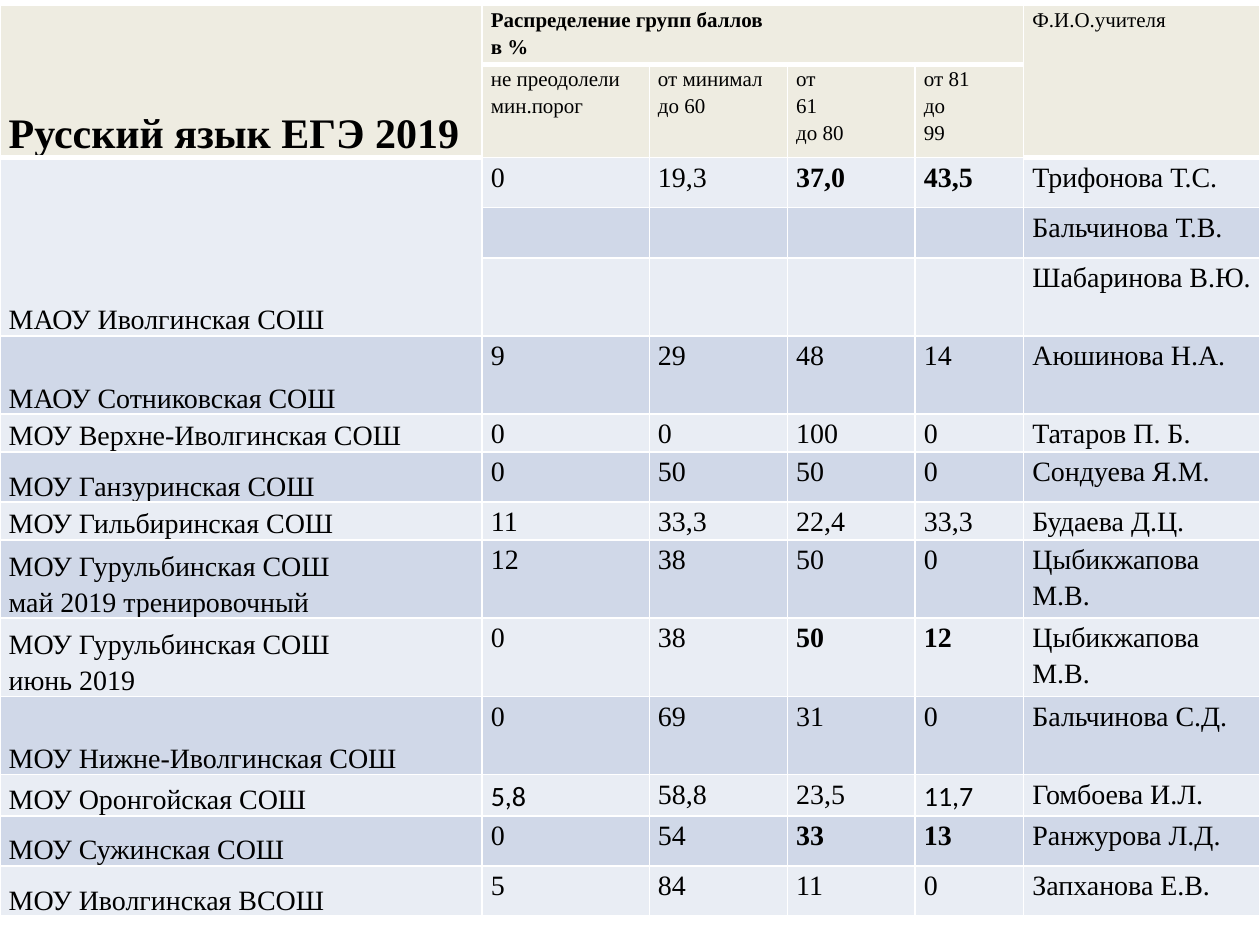
from lxml.etree import SubElement as Sub
from pptx import Presentation
from pptx.dml.color import RGBColor as Rgb
from pptx.enum.text import MSO_ANCHOR as Anchor
from pptx.oxml.ns import qn
from pptx.util import Pt

HUES = {"head": "EEECE1", "light": "E9EDF4", "dark": "D0D8E8",
        "line": "FFFFFF", "text": "000000"}
SERIF, SANS = "Times New Roman", "Calibri"

ROWS = [
    ["Русский язык ЕГЭ 2019", "Распределение групп баллов\nв %", "", "", "",
     "Ф.И.О.учителя"],
    ["", "не преодолели мин.порог", "от минал\nдо 60".replace("минал", "минимал"),
     "от\n61\nдо 80", "от 81\nдо\n99", ""],
    ["МАОУ Иволгинская СОШ", "0", "19,3", "37,0", "43,5", "Трифонова Т.С."],
    ["", "", "", "", "", "Бальчинова Т.В."],
    ["", "", "", "", "", "Шабаринова В.Ю."],
    ["МАОУ Сотниковская СОШ", "9", "29", "48", "14", "Аюшинова Н.А."],
    ["МОУ Верхне-Иволгинская СОШ", "0", "0", "100", "0", "Татаров П. Б."],
    ["МОУ Ганзуринская СОШ", "0", "50", "50", "0", "Сондуева Я.М."],
    ["МОУ Гильбиринская СОШ", "11", "33,3", "22,4", "33,3", "Будаева Д.Ц."],
    ["МОУ Гурульбинская СОШ\nмай 2019 тренировочный", "12", "38", "50", "0",
     "Цыбикжапова М.В."],
    ["МОУ Гурульбинская СОШ\nиюнь 2019", "0", "38", "50", "12",
     "Цыбикжапова М.В."],
    ["МОУ Нижне-Иволгинская СОШ", "0", "69", "31", "0", "Бальчинова С.Д."],
    ["МОУ Оронгойская СОШ", "5,8", "58,8", "23,5", "11,7", "Гомбоева И.Л."],
    ["МОУ Сужинская СОШ", "0", "54", "33", "13", "Ранжурова Л.Д."],
    ["МОУ Иволгинская ВСОШ", "5", "84", "11", "0", "Запханова Е.В."],
]
WIDTHS = [275.5, 95.5, 79, 73, 62, 135]
ONE, MID, TWO = 21.6, 28.7, 44.7
HEIGHTS = [34, 53, MID, MID, TWO, TWO, ONE, MID, ONE, TWO, TWO, TWO, 23.6,
           MID, MID]
MERGES = [((0, 0), (1, 0)), ((0, 1), (0, 4)), ((0, 5), (1, 5)),
          ((2, 0), (4, 0))]
BOLD = {(0, 0), (0, 1)} | {(r, c) for r in (2, 10, 13) for c in (3, 4)}
PLAIN = {(12, 1), (12, 4)}  # cells set in the sans font
THICK = {(0, c) for c in range(6)} | {(1, 0), (1, 5)}


def edge(cell, low):
    """Draw the four borders; low is the width of the bottom one."""
    props = cell._tc.get_or_add_tcPr()
    for i, side in enumerate("LRTB"):
        width = low if side == "B" else 1
        line = Sub(props, qn(f"a:ln{side}"), w=str(Pt(width)))
        Sub(Sub(line, qn("a:solidFill")), qn("a:srgbClr"), val=HUES["line"])
        props.insert(i, line)


def write(cell, text, size, font, bold):
    frame = cell.text_frame
    for i, part in enumerate(text.split("\n")):
        para = frame.add_paragraph() if i else frame.paragraphs[0]
        para.line_spacing = 1.15
        run = para.add_run()
        run.text = part
        run.font.size = Pt(size)
        run.font.name = font
        run.font.bold = bold
        run.font.color.rgb = Rgb.from_string(HUES["text"])


def style(cell, row, col):
    cell.margin_left = cell.margin_right = Pt(5)
    cell.margin_top = cell.margin_bottom = 0
    if col == 0:
        cell.vertical_anchor = Anchor.BOTTOM
    hue = "head" if row < 2 else ("light", "dark")[row % 2]
    cell.fill.solid()
    cell.fill.fore_color.rgb = Rgb.from_string(HUES[hue])
    edge(cell, 3 if (row, col) in THICK else 1)


def main():
    deck = Presentation()
    deck.slide_width, deck.slide_height = Pt(720), Pt(540)
    slide = deck.slides.add_slide(deck.slide_layouts[6])
    table = slide.shapes.add_table(len(ROWS), len(WIDTHS), 0, Pt(3),
                                   Pt(sum(WIDTHS)), Pt(sum(HEIGHTS))).table
    table.first_row = table.horz_banding = False
    for col, width in zip(table.columns, WIDTHS):
        col.width = Pt(width)
    for row, height in zip(table.rows, HEIGHTS):
        row.height = Pt(height)

    for r, texts in enumerate(ROWS):
        for c, text in enumerate(texts):
            cell, spot = table.cell(r, c), (r, c)
            style(cell, r, c)
            size = 24 if spot == (0, 0) else 12 if r < 2 else 16
            if text:
                write(cell, text, size, SANS if spot in PLAIN else SERIF,
                      spot in BOLD)
    for start, end in MERGES:
        table.cell(*start).merge(table.cell(*end))
    deck.save("out.pptx")


if __name__ == "__main__":
    main()
